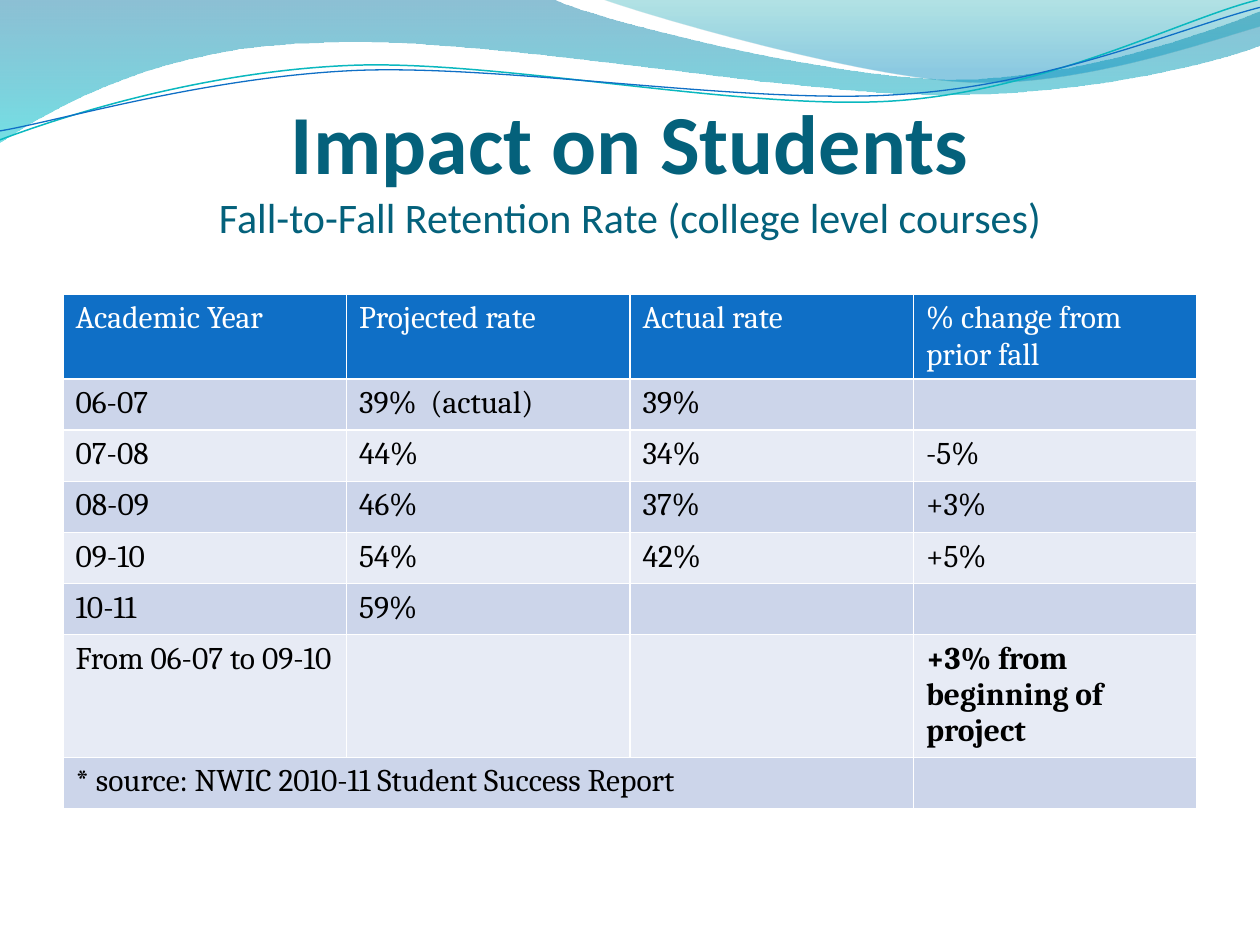
from dataclasses import dataclass

from lxml.etree import SubElement
from pptx import Presentation
from pptx.dml.color import RGBColor
from pptx.enum.text import MSO_ANCHOR as Anchor, PP_ALIGN as Align
from pptx.oxml.ns import qn
from pptx.util import Cm, Pt

COLORS = {
    "title": "04617B",
    "header": "0F6FC6",
    "band_dark": "CCD5EA",
    "band_light": "E7EBF5",
    "white": "FFFFFF",
    "black": "000000",
    "wave_blue": "0074A1",
    "wave_cyan": "00C6CF",
    "crest_teal": "00A1A9",
    "crest_blue": "008BBF",
    "teal_line": "0AB8BF",
    "blue_line": "0F6FC6",
}


@dataclass
class Stop:
    position: float
    color: str
    opacity: int


@dataclass
class Ribbon:
    start: tuple
    segments: list
    stops: tuple = ()
    line: str = ""
    width: float = 0


RIBBONS = [
    Ribbon((0, 0), [
        (11.18, 0),
        (12.09, 0.43, 16.87, 1.6, 19.25, 1.6),
        (21.67, 1.6, 24.33, 0.66, 25.4, 0.23),
        (25.4, 0.91),
        (24.97, 1.12, 22.1, 1.93, 18.95, 1.91),
        (15.8, 1.91, 9.7, 0.71, 6.53, 0.86),
        (3.28, 0.91, 1.17, 2.11, 0, 2.87),
    ], stops=(Stop(0, "wave_blue", 45), Stop(1, "wave_cyan", 55))),
    Ribbon((12.17, 0), [
        (12.93, 0.28, 17.32, 1.57, 19.53, 1.65),
        (21.74, 1.75, 24.41, 0.81, 25.4, 0.53),
        (25.4, 0),
    ], stops=(Stop(0, "crest_teal", 30), Stop(0.8, "crest_blue", 45))),
    Ribbon((0, 2.82), [
        (1.22, 2.36, 4.01, 1.45, 7.04, 1.32),
        (10.03, 1.19, 15.06, 2.26, 18.11, 2.03),
        (21.16, 1.8, 23.83, 0.38, 25.35, 0),
    ], line="teal_line", width=0.85),
    Ribbon((0, 2.64), [
        (1.19, 2.44, 4.17, 1.55, 7.19, 1.42),
        (10.24, 1.3, 15.16, 2.13, 18.21, 1.9),
        (21.23, 1.7, 23.9, 0.53, 25.4, 0.15),
    ], line="blue_line", width=0.75),
]

RETENTION = [
    ("Academic Year", "Projected rate", "Actual rate", "% change from prior fall"),
    ("06-07", "39%  (actual)", "39%", ""),
    ("07-08", "44%", "34%", "-5%"),
    ("08-09", "46%", "37%", "+3%"),
    ("09-10", "54%", "42%", "+5%"),
    ("10-11", "59%", "", ""),
    ("From 06-07 to 09-10", "", "", "+3% from beginning of project"),
    ("* source: NWIC 2010-11 Student Success Report", "", "", ""),
]
WRAPPED_ROWS = (0, 6)


def rgb(name: str) -> RGBColor:
    return RGBColor.from_string(COLORS[name])


def write(paragraph, text: str, *, size: float, font: str, color: str, bold: bool = False) -> None:
    run = paragraph.add_run()
    run.text = text
    run.font.size = Pt(size)
    run.font.name = font
    run.font.bold = bold
    run.font.color.rgb = rgb(color)


def bend(shape, segments: list) -> None:
    outline = next(shape.element.iter(qn("a:path")))
    corners = iter(outline.findall(qn("a:lnTo")))
    for segment in segments:
        first = next(corners)
        if len(segment) == 6:
            first.tag = qn("a:cubicBezTo")
            for corner in (next(corners), next(corners)):
                first.append(corner[0])
                outline.remove(corner)


def draw_ribbon(slide, ribbon: Ribbon) -> None:
    vertices = [(Cm(x), Cm(y)) for segment in ribbon.segments
                for x, y in zip(segment[::2], segment[1::2])]
    builder = slide.shapes.build_freeform(Cm(ribbon.start[0]), Cm(ribbon.start[1]))
    builder.add_line_segments(vertices, close=bool(ribbon.stops))
    shape = builder.convert_to_shape()
    bend(shape, ribbon.segments)
    shape.shadow.inherit = False
    if not ribbon.stops:
        shape.fill.background()
        shape.line.color.rgb = rgb(ribbon.line)
        shape.line.width = Pt(ribbon.width)
        return
    shape.line.fill.background()
    shape.fill.gradient()
    shape.fill.gradient_angle = 270
    for target, stop in zip(shape.fill.gradient_stops, ribbon.stops):
        target.position = stop.position
        target.color.rgb = rgb(stop.color)
    for color, stop in zip(shape.element.iter(qn("a:srgbClr")), ribbon.stops):
        SubElement(color, qn("a:alpha"), val=str(stop.opacity * 1000))


def draw_title(slide) -> None:
    frame = slide.shapes.add_textbox(Cm(1.27), Cm(0.76), Cm(22.86), Cm(4.11)).text_frame
    frame.word_wrap = True
    frame.vertical_anchor = Anchor.BOTTOM
    frame.margin_left = frame.margin_right = frame.margin_bottom = 0
    heading = frame.paragraphs[0]
    heading.alignment = Align.CENTER
    write(heading, "Impact on Students", size=48, font="Calibri", color="title", bold=True)
    heading.add_line_break()
    write(heading, "Fall-to-Fall Retention Rate (college level courses)",
          size=24, font="Calibri", color="title")


def draw_retention(slide) -> None:
    rows, columns = len(RETENTION), len(RETENTION[0])
    frame = slide.shapes.add_table(rows, columns, Cm(1.27), Cm(5.93),
                                   Cm(22.86), Cm(1.03) * rows)
    frame.height = Cm(10.49)
    table = frame.table
    table.cell(rows - 1, 0).merge(table.cell(rows - 1, 2))
    for row, values in enumerate(RETENTION):
        band = "header" if row == 0 else "band_dark" if row % 2 else "band_light"
        for column, value in enumerate(values):
            cell = table.cell(row, column)
            cell.fill.solid()
            cell.fill.fore_color.rgb = rgb(band)
            if row in WRAPPED_ROWS:
                cell.margin_bottom = Cm(0.06)
            if value:
                write(cell.text_frame.paragraphs[0], value, size=18, font="Cambria",
                      color="black" if row else "white",
                      bold=value.endswith("project"))


def main() -> None:
    deck = Presentation()
    deck.slide_width, deck.slide_height = Cm(25.4), Cm(19.05)
    slide = deck.slides.add_slide(deck.slide_layouts[6])
    for ribbon in RIBBONS:
        draw_ribbon(slide, ribbon)
    draw_title(slide)
    draw_retention(slide)
    deck.save("out.pptx")


if __name__ == "__main__":
    main()
